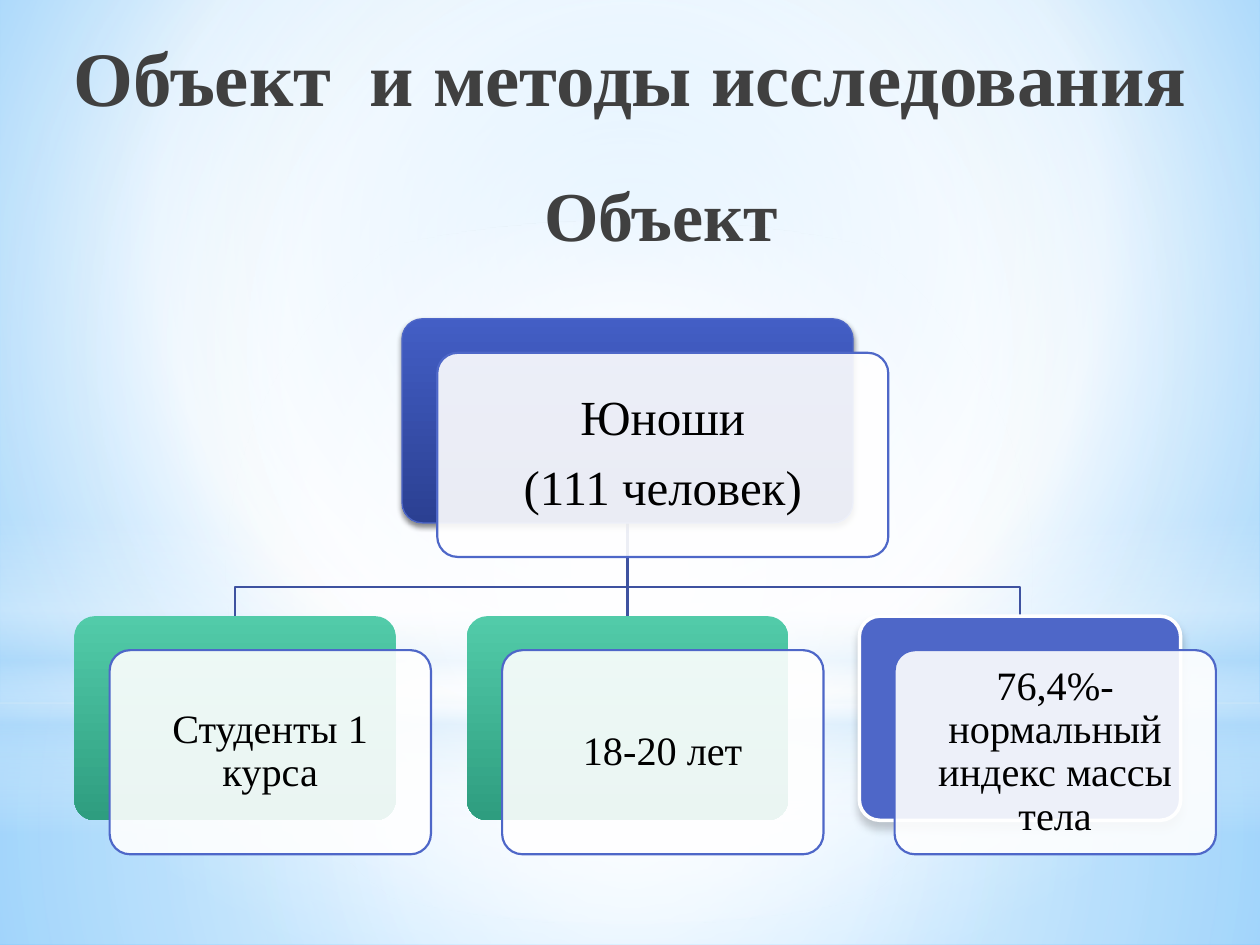
"""Build a slide on the object and methods of a study, with a tree of cards."""
import pptx
import pptx.dml.color
import pptx.enum.shapes
import pptx.enum.text
import pptx.oxml
import pptx.oxml.ns
import pptx.util
from dataclasses import dataclass

INCH = pptx.util.Inches
PT = pptx.util.Pt
KIND = pptx.enum.shapes.MSO_SHAPE
ALIGN = pptx.enum.text.PP_ALIGN
ANCHOR = pptx.enum.text.MSO_ANCHOR
WIDE, HIGH = 10, 7.5
MID, PITCH = 4.98, 3.115
ROWS = 2.53, 4.89
TALL, STEP = 1.62, (0.28, 0.27)


@dataclass(frozen=True)
class Theme:
    """Colours, font and type sizes of the slide."""
    font: str = "Times New Roman"
    head: int = 44
    sub: int = 40
    root: int = 28
    leaf: int = 23
    dark: str = "404040"
    ink: str = "000000"
    white: str = "FFFFFF"
    sky: str = "B4DCFA"
    blue: str = "4E67C8"
    link: str = "3E52A0"
    back: tuple = ((0, "9ED5FF"), (60, "FFFFFF"), (100, "5BB9FF"))
    deep: tuple = ((0, "435EC5"), (100, "2B4092"))
    green: tuple = ((0, "52CBA9"), (100, "2E9D7F"))


THEME = Theme()


def tint(code):
    """Return the colour for a hex code."""
    return pptx.dml.color.RGBColor.from_string(code)


def apply(item, **vals):
    """Set each named value on an item."""
    for name, val in vals.items():
        setattr(item, name, val)


def node(text):
    """Make an XML element in the drawing namespace."""
    space = pptx.oxml.ns.nsdecls("a")
    return pptx.oxml.parse_xml(text.replace(">", f" {space}>", 1))


def shade(fill, root, stops, focus=None):
    """Give a fill a gradient, radial if it has a focus and else downward."""
    fill.gradient()
    grad = next(root.iter(pptx.oxml.ns.qn("a:gradFill")))
    for child in list(grad):
        grad.remove(child)
    marks = ""
    for place, code, *clear in stops:
        alpha = f'<a:alpha val="{clear[0] * 1000}"/>' if clear else ""
        marks += f'<a:gs pos="{place * 1000}"><a:srgbClr val="{code}">{alpha}</a:srgbClr></a:gs>'
    grad.append(node(f"<a:gsLst>{marks}</a:gsLst>"))
    if focus:
        sides = " ".join(f'{side}="{val * 1000}"' for side, val in zip("ltrb", focus))
        grad.append(node(f'<a:path path="circle"><a:fillToRect {sides}/></a:path>'))
    else:
        grad.append(node('<a:lin ang="5400000" scaled="0"></a:lin>'))


def stroke(line, code, width):
    """Colour a line and set its width."""
    line.color.rgb = tint(code)
    line.width = PT(width)


def block(slide, kind, spot, fill, focus=None, edge=None, shade_by=None):
    """Add a shape with a plain or gradient fill, an edge and a shadow."""
    shape = slide.shapes.add_shape(kind, *map(INCH, spot))
    shape.shadow.inherit = False
    if isinstance(fill, str):
        shape.fill.solid()
        shape.fill.fore_color.rgb = tint(fill)
    else:
        shade(shape.fill, shape.element, fill, focus)
    if edge:
        stroke(shape.line, *edge)
    else:
        shape.line.fill.background()
    if shade_by:
        alpha, blur, dist = shade_by
        cast = node(
            f'<a:outerShdw blurRad="{PT(blur)}" dist="{PT(dist)}" dir="5400000" rotWithShape="0">'
            f'<a:srgbClr val="{THEME.ink}"><a:alpha val="{alpha * 1000}"/></a:srgbClr></a:outerShdw>')
        next(shape.element.iter(pptx.oxml.ns.qn("a:effectLst"))).append(cast)
    return shape


def write(shape, lines, size, code, inset, anchor, bold=False, **form):
    """Fill a shape with lines of text in one format."""
    frame = shape.text_frame
    apply(frame, word_wrap=True, vertical_anchor=anchor, margin_left=INCH(inset[0]),
          margin_right=INCH(inset[0]), margin_top=INCH(inset[1]), margin_bottom=INCH(inset[1]))
    frame.text = "\n".join(lines)
    for para in frame.paragraphs:
        apply(para, **form)
        for run in para.runs:
            apply(run.font, name=THEME.font, size=PT(size), bold=bold)
            run.font.color.rgb = tint(code)


def label(slide, spot, text, size, anchor, **form):
    """Add a bold heading in a text box."""
    box = slide.shapes.add_textbox(*map(INCH, spot))
    write(box, [text], size, THEME.dark, (0.1, 0.05), anchor, bold=True, **form)


def card(slide, mid, top, wide, lines, size, inset, **look):
    """Add a coloured card with a pale text card shifted over it."""
    left = mid - wide / 2
    round_kind = KIND.ROUNDED_RECTANGLE
    rear = block(slide, round_kind, (left, top, wide, TALL), **look)
    front = block(slide, round_kind, (left + STEP[0], top + STEP[1], wide, TALL),
                  THEME.white, edge=(THEME.blue, 1.25))
    hue = next(front.element.iter(pptx.oxml.ns.qn("a:srgbClr")))
    hue.append(node('<a:alpha val="90000"></a:alpha>'))
    for shape in (rear, front):
        shape.adjustments[0] = 0.1
    write(front, lines, size, THEME.ink, (inset, inset), ANCHOR.MIDDLE,
          alignment=ALIGN.CENTER, line_spacing=0.9, space_after=PT(size * 0.35))


def branch(slide, mid):
    """Link the root card to the leaf card centred at mid."""
    top, low = ROWS[0] + TALL, ROWS[1]
    bend = top + 0.51
    if mid == MID:
        line = slide.shapes.add_connector(
            pptx.enum.shapes.MSO_CONNECTOR.STRAIGHT, *map(INCH, (MID, top, mid, low)))
        line.element.spPr.append(node("<a:effectLst></a:effectLst>"))
        stroke(line.line, THEME.link, 1.25)
        spare = line.element.spPr.find(pptx.oxml.ns.qn("a:effectLst"))
        line.element.spPr.append(spare)
        return
    pen = slide.shapes.build_freeform(INCH(MID), INCH(top))
    pen.add_line_segments([(INCH(x), INCH(y)) for x, y in ((MID, bend), (mid, bend), (mid, low))],
                          close=False)
    line = pen.convert_to_shape()
    line.shadow.inherit = False
    line.fill.background()
    stroke(line.line, THEME.link, 1.25)


def scene(slide):
    """Paint the sky behind the cards."""
    white, sky, focus = THEME.white, THEME.sky, (50,) * 4
    shade(slide.background.fill, slide.element, THEME.back, (20, 10, 20, 60))
    split = 5.58
    block(slide, KIND.RECTANGLE, (0, split, WIDE, HIGH - split),
          ((0, white, 91), (37, white, 76), (100, sky, 79)), focus)
    block(slide, KIND.RECTANGLE, (0, 0, WIDE, split),
          ((0, white, 89), (48, white, 62), (100, sky, 79)), focus)
    block(slide, KIND.RECTANGLE, (0, 4.12, WIDE, HIGH / 3),
          ((0, white, 0), (29, white, 30), (45, sky, 40), (55, white, 26), (65, sky, 60), (100, white, 0)))
    block(slide, KIND.OVAL, (0, 1.75, WIDE, split), ((0, white), (56, white, 0)), focus)


def main():
    """Build and save the slide."""
    deck = pptx.Presentation()
    apply(deck, slide_width=INCH(WIDE), slide_height=INCH(HIGH))
    slide = deck.slides.add_slide(deck.slide_layouts[6])
    scene(slide)
    label(slide, (0.28, 0.13, 9.45, 0.94), "Объект  и методы исследования",
          THEME.head, ANCHOR.MIDDLE, alignment=ALIGN.CENTER)
    label(slide, (4.22, 1.31, 5.35, 0.9), "Объект", THEME.sub, ANCHOR.TOP, space_before=PT(5))
    mids = [MID + PITCH * col for col in (-1, 0, 1)]
    for mid in reversed(mids):
        branch(slide, mid)
    card(slide, MID, ROWS[0], 3.58, ["Юноши", "(111 человек)"], THEME.root, 0.12,
         fill=THEME.deep, edge=(THEME.blue, 0.75), shade_by=(45, 3.1, 1.8))
    green = dict(fill=THEME.green)
    plain = dict(fill=THEME.blue, edge=(THEME.white, 2), shade_by=(20, 5, 4))
    leaves = (("Студенты 1 курса", green), ("18-20 лет", green),
              ("76,4%-нормальный индекс массы тела", plain))
    for mid, (text, look) in zip(mids, leaves):
        card(slide, mid, ROWS[1], 2.55, [text], THEME.leaf, 0.1, **look)
    deck.save("out.pptx")


if __name__ == "__main__":
    main()
